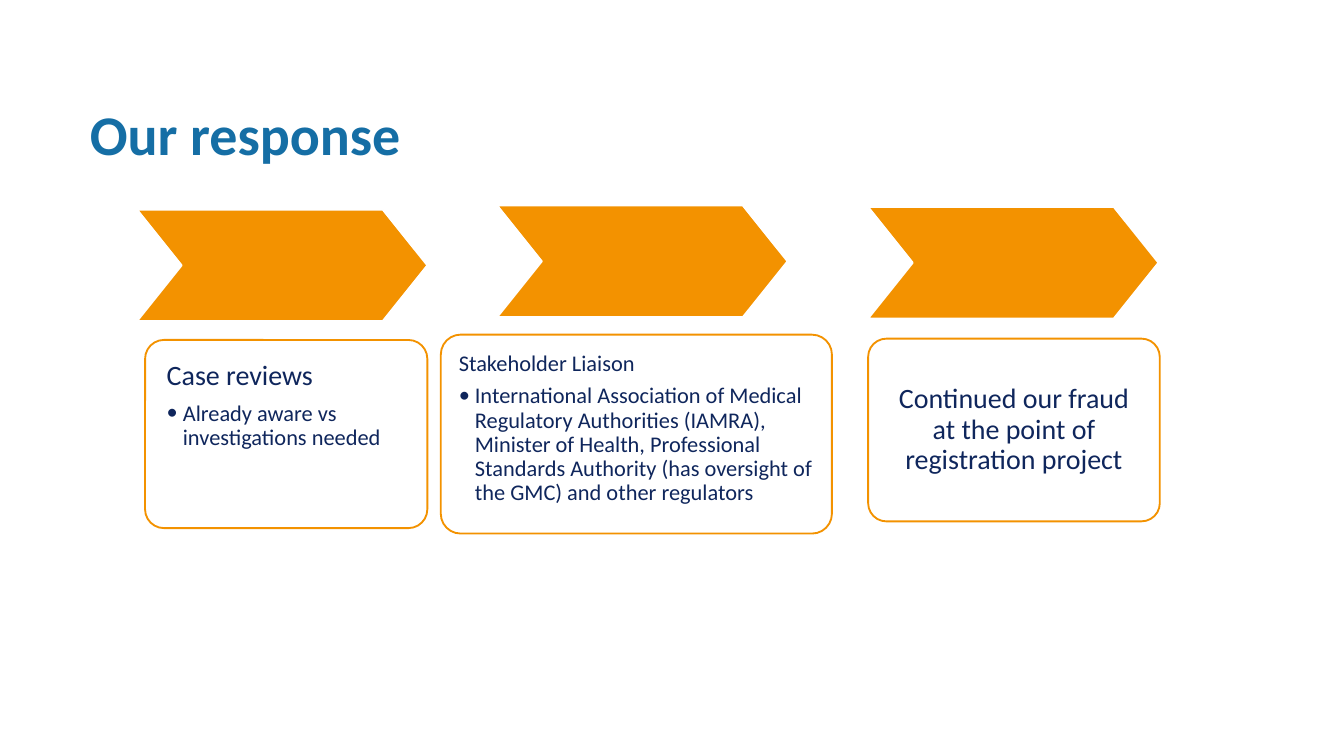
import pptx
import pptx.util
import pptx.dml.color
import pptx.enum.shapes
import pptx.enum.text
from lxml import etree

Inches, Pt = pptx.util.Inches, pptx.util.Pt
Shape = pptx.enum.shapes.MSO_SHAPE
Anchor = pptx.enum.text.MSO_ANCHOR
Align = pptx.enum.text.PP_ALIGN

# Content
TITLE = "Our response"
STEPS = [
    dict(arrow=(1.02, 1.56), card=(1.08, 2.53, 2.1, 1.4), inset=0.12,
         head="Case reviews", size=15,
         points=["Already aware vs investigations needed"]),
    dict(arrow=(3.7, 1.53), card=(3.28, 2.49, 2.91, 1.48), inset=0.09,
         head="Stakeholder Liaison", size=12,
         points=["International Association of Medical Regulatory Authorities "
                 "(IAMRA), Minister of Health, Professional Standards Authority "
                 "(has oversight of the GMC) and other regulators"]),
    dict(arrow=(6.46, 1.54), card=(6.46, 2.52, 2.17, 1.36), inset=0.12,
         head="Continued our fraud at the point of registration project",
         size=15, points=[]),
]
WIDTH = 10
HEIGHT = WIDTH * 9 / 16
ARROW = (2.16, 0.83)
BLUE, NAVY, ORANGE, WHITE = "156EA5", "0F265C", "F39200", "FFFFFF"
FONT, SMALL, INDENT = "Calibri", 12, 0.12


def color(text):
    return pptx.dml.color.RGBColor.from_string(text)


def add_box(kind, area, adjust, fill, line):
    box = slide.shapes.add_shape(kind, *map(Inches, area))
    box.adjustments[0] = adjust
    box.shadow.inherit = False
    box.fill.solid()
    box.fill.fore_color.rgb = color(fill)
    box.line.color.rgb = color(line)
    box.line.width = Pt(1)
    return box


def add_bullet(para):
    props = para._p.get_or_add_pPr()
    props.set("marL", str(Inches(INDENT)))
    props.set("indent", str(-Inches(INDENT)))
    for tag, key, value in (("a:buFont", "typeface", FONT),
                            ("a:buChar", "char", "•")):
        etree.SubElement(props, pptx.oxml.ns.qn(tag)).set(key, value)


def style(para, size, ink, bold=False, align=Align.LEFT, after=0):
    para.alignment = align
    para.line_spacing = 0.9
    para.space_after = Pt(size * after)
    for run in para.runs:
        font = run.font
        font.name, font.size, font.bold = FONT, Pt(size), bold
        font.color.rgb = color(ink)


deck = pptx.Presentation()
deck.slide_width, deck.slide_height = Inches(WIDTH), Inches(HEIGHT)
slide = deck.slides.add_slide(deck.slide_layouts[6])

# Title
title = slide.shapes.add_textbox(*map(Inches, (0.57, 0.75, 7.5, 0.52)))
title.text_frame.word_wrap = True
title.text_frame.text = TITLE
style(title.text_frame.paragraphs[0], 30, BLUE, bold=True)

# Steps: a chevron above a card
for step in STEPS:
    add_box(Shape.CHEVRON, step["arrow"] + ARROW, 0.4, ORANGE, WHITE)
    card = add_box(Shape.ROUNDED_RECTANGLE, step["card"], 0.1, WHITE, ORANGE)
    frame = card.text_frame
    frame.word_wrap = True
    frame.margin_left = frame.margin_right = Inches(step["inset"])
    frame.margin_top = frame.margin_bottom = Inches(step["inset"])
    listed = bool(step["points"])
    frame.vertical_anchor = Anchor.TOP if listed else Anchor.MIDDLE
    frame.text = step["head"]
    style(frame.paragraphs[0], step["size"], NAVY, after=0.35,
          align=Align.LEFT if listed else Align.CENTER)
    for point in step["points"]:
        para = frame.add_paragraph()
        para.text = point
        para.level = 1
        add_bullet(para)
        style(para, SMALL, NAVY, after=0.15)

deck.save("out.pptx")
